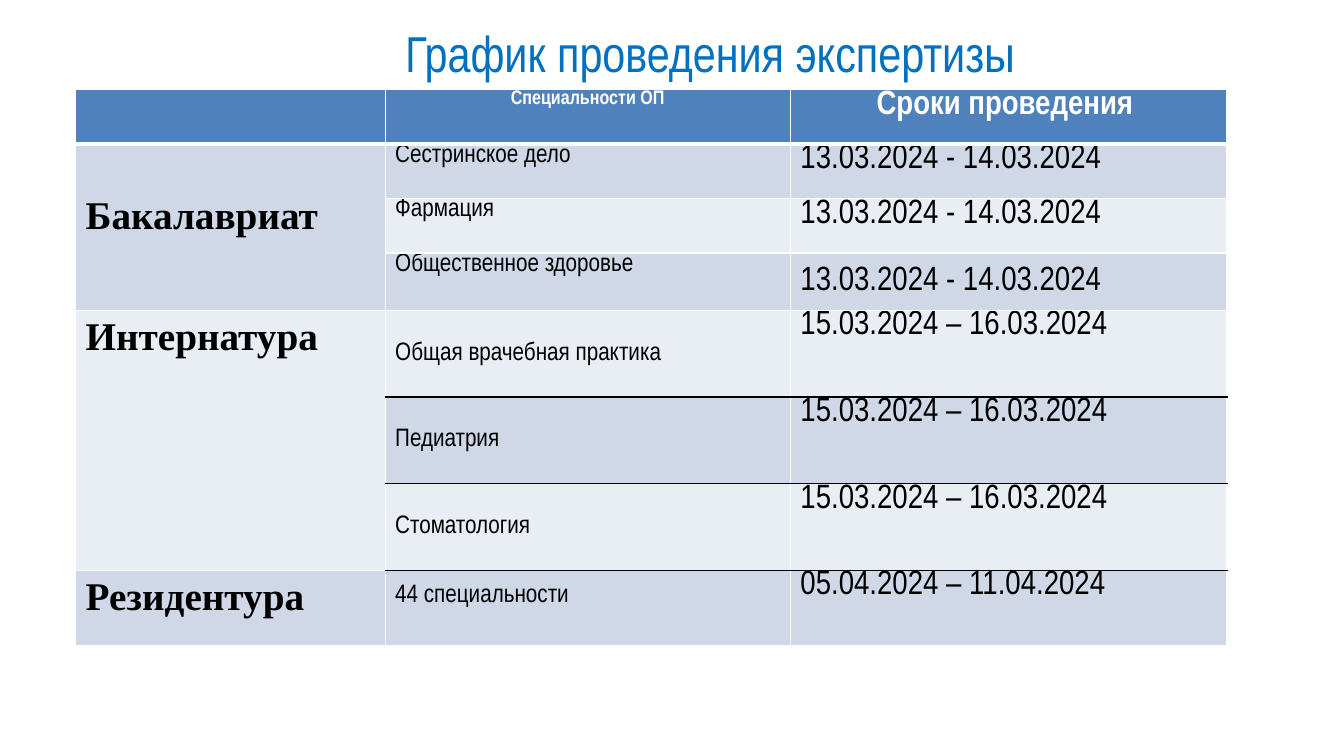
from dataclasses import dataclass

from lxml.etree import SubElement
from pptx import Presentation
from pptx.dml.color import RGBColor
from pptx.enum.text import MSO_ANCHOR, MSO_AUTO_SIZE, PP_ALIGN
from pptx.oxml.ns import qn
from pptx.slide import Slide
from pptx.table import Table, _Cell
from pptx.util import Inches, Pt

WHITE = RGBColor(0xFF, 0xFF, 0xFF)
BLACK = RGBColor(0, 0, 0)
TITLE_BLUE = RGBColor(0x00, 0x70, 0xC0)
HEADER_BLUE = RGBColor(0x4F, 0x81, 0xBD)
BAND_DARK = RGBColor(0xD0, 0xD8, 0xE8)
BAND_LIGHT = RGBColor(0xE9, 0xED, 0xF4)
NARROW = "Arial Narrow"
SERIF = "Times New Roman"

COLUMN_WIDTHS = [3.07, 4.02, 4.33]
ROW_HEIGHTS = [0.54, 0.54, 0.54, 0.57, 0.86, 0.86, 0.86, 0.75]
BLACK_RULED_ROWS = (4, 5, 6)


@dataclass(frozen=True)
class TextStyle:
    size: int
    font: str = NARROW
    color: RGBColor = BLACK
    bold: bool = False
    align: PP_ALIGN = PP_ALIGN.LEFT
    space_after: int = 0


@dataclass(frozen=True)
class Level:
    name: str
    first_row: int
    last_row: int
    top_margin: float = 0.05


@dataclass(frozen=True)
class Review:
    specialty: str
    dates: str
    specialty_anchor: MSO_ANCHOR = MSO_ANCHOR.TOP
    dates_anchor: MSO_ANCHOR = MSO_ANCHOR.TOP
    bottom_margin: float = 0
    space_after: int = 0


LEVELS = [
    Level("Бакалавриат", 1, 3, 0.5),
    Level("Интернатура", 4, 6),
    Level("Резидентура", 7, 7),
]
BACHELOR_DATES = "13.03.2024 - 14.03.2024"
INTERN_DATES = "15.03.2024 – 16.03.2024"
MIDDLE = MSO_ANCHOR.MIDDLE
REVIEWS = [
    Review("Сестринское дело", BACHELOR_DATES, space_after=8),
    Review("Фармация", BACHELOR_DATES, space_after=8),
    Review("Общественное здоровье", BACHELOR_DATES, dates_anchor=MIDDLE, space_after=8),
    Review("Общая врачебная практика", INTERN_DATES, MIDDLE),
    Review("Педиатрия", INTERN_DATES, MIDDLE),
    Review("Стоматология", INTERN_DATES, MIDDLE),
    Review("44 специальности", "05.04.2024 – 11.04.2024", MIDDLE, bottom_margin=0.25),
]


def write(frame, text: str, style: TextStyle) -> None:
    paragraph = frame.paragraphs[0]
    paragraph.alignment = style.align
    paragraph.space_after = Pt(style.space_after)
    run = paragraph.add_run()
    run.text = text
    run.font.size = Pt(style.size)
    run.font.name = style.font
    run.font.bold = style.bold
    run.font.color.rgb = style.color


def fill_cell(cell: _Cell, text: str, style: TextStyle,
              anchor: MSO_ANCHOR = MSO_ANCHOR.TOP,
              top: float = 0, bottom: float = 0) -> None:
    cell.margin_left = cell.margin_right = Inches(0.1)
    cell.margin_top = Inches(top)
    cell.margin_bottom = Inches(bottom)
    cell.vertical_anchor = anchor
    write(cell.text_frame, text, style)


def add_border(cell: _Cell, side: str, color: RGBColor, width: int) -> None:
    line = SubElement(cell._tc.get_or_add_tcPr(), qn(f"a:{side}"), w=str(Pt(width)))
    SubElement(SubElement(line, qn("a:solidFill")), qn("a:srgbClr"), val=str(color))


def rule_below(row: int, column: int) -> tuple[RGBColor, int]:
    if row == 0:
        return WHITE, 3
    if row in BLACK_RULED_ROWS and column > 0:
        return BLACK, 1
    return WHITE, 1


def paint_grid(table: Table) -> None:
    for row in range(len(ROW_HEIGHTS)):
        for column in range(len(COLUMN_WIDTHS)):
            cell = table.cell(row, column)
            above = rule_below(row - 1, column) if row else (WHITE, 1)
            add_border(cell, "lnL", WHITE, 1)
            add_border(cell, "lnR", WHITE, 1)
            add_border(cell, "lnT", *above)
            add_border(cell, "lnB", *rule_below(row, column))
            cell.fill.solid()
            band = BAND_DARK if row % 2 else BAND_LIGHT
            cell.fill.fore_color.rgb = band if row else HEADER_BLUE


def add_schedule(slide: Slide) -> None:
    schedule = slide.shapes.add_table(
        len(ROW_HEIGHTS), len(COLUMN_WIDTHS),
        Inches(0.75), Inches(0.89), Inches(11.42), Inches(5.52)).table
    for column, width in zip(schedule.columns, COLUMN_WIDTHS):
        column.width = Inches(width)
    for row, height in zip(schedule.rows, ROW_HEIGHTS):
        row.height = Inches(height)
    paint_grid(schedule)

    for column, heading, size in [(1, "Специальности ОП", 14), (2, "Сроки проведения ", 24)]:
        fill_cell(schedule.cell(0, column), heading,
                  TextStyle(size, color=WHITE, bold=True, align=PP_ALIGN.CENTER))
    for level in LEVELS:
        level_cell = schedule.cell(level.first_row, 0)
        if level.last_row > level.first_row:
            level_cell.merge(schedule.cell(level.last_row, 0))
        fill_cell(level_cell, level.name, TextStyle(28, SERIF, bold=True),
                  top=level.top_margin, bottom=0.05)
    for row, review in enumerate(REVIEWS, start=1):
        fill_cell(schedule.cell(row, 1), review.specialty, TextStyle(18),
                  review.specialty_anchor, bottom=review.bottom_margin)
        fill_cell(schedule.cell(row, 2), review.dates,
                  TextStyle(24, space_after=review.space_after), review.dates_anchor)


def add_title(slide: Slide) -> None:
    title = slide.shapes.title
    title.left, title.top = Inches(3.92), Inches(0.17)
    title.width, title.height = Inches(6.36), Inches(0.71)
    frame = title.text_frame
    frame.word_wrap = False
    frame.auto_size = MSO_AUTO_SIZE.SHAPE_TO_FIT_TEXT
    frame.vertical_anchor = MSO_ANCHOR.TOP
    write(frame, "График проведения экспертизы", TextStyle(36, color=TITLE_BLUE))


def main() -> None:
    presentation = Presentation()
    presentation.slide_width = Inches(13.33)
    presentation.slide_height = Inches(7.5)
    slide = presentation.slides.add_slide(presentation.slide_layouts[5])
    add_schedule(slide)
    add_title(slide)
    presentation.save("out.pptx")


if __name__ == "__main__":
    main()
